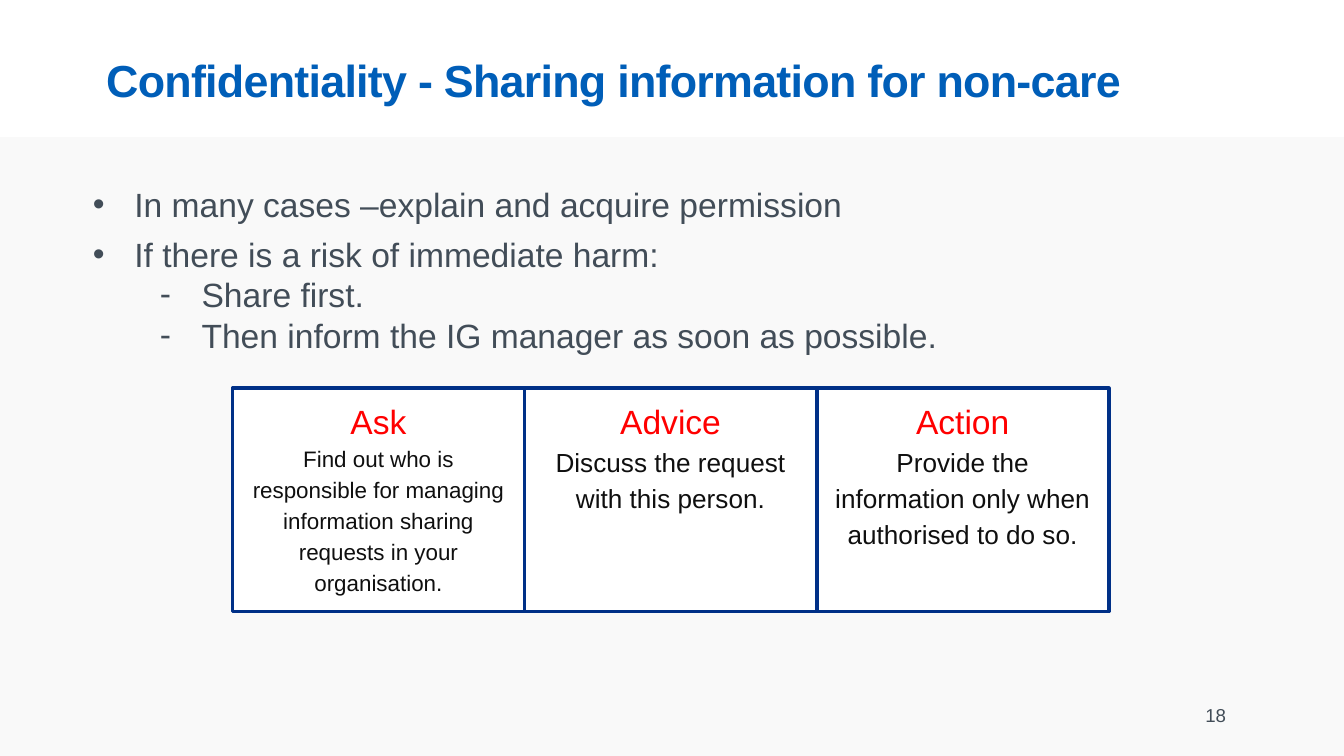
from dataclasses import dataclass

from lxml.etree import SubElement
from pptx import Presentation
from pptx.dml.color import RGBColor
from pptx.enum.shapes import MSO_SHAPE
from pptx.enum.text import MSO_ANCHOR, MSO_AUTO_SIZE, PP_ALIGN
from pptx.oxml.ns import qn
from pptx.util import Inches, Pt


@dataclass(frozen=True)
class Theme:
    font: str = "Arial"
    title: str = "005EB8"
    text: str = "424D58"
    heading: str = "FF0000"
    detail: str = "0F0F0F"
    border: str = "003087"
    band: str = "F9F9F9"
    white: str = "FFFFFF"
    title_size: int = 24
    body_size: int = 18
    number_size: int = 10


THEME = Theme()
WIDTH = 10
HEIGHT = WIDTH * 9 / 16
BAND_TOP = 1.02

# Text, level, space before
BULLETS = [
    ("In many cases –explain and acquire permission", 0, 0),
    ("If there is a risk of immediate harm:", 0, 5),
    ("Share first.", 1, 0),
    ("Then inform the IG manager as soon as possible.", 1, 0),
]
# Heading, detail, detail size
STEPS = [
    ("Ask", "Find out who is responsible for managing information sharing "
            "requests in your organisation.", 12),
    ("Advice", "Discuss the request with this person.", 14),
    ("Action", "Provide the information only when authorised to do so.", 14),
]
GRID_LEFT, GRID_RIGHT, GRID_TOP, ROW = 1.73, 8.25, 2.89, 1.66
COLUMN = (GRID_RIGHT - GRID_LEFT) / len(STEPS)


def place(sp, left, top, width, height):
    sp.left, sp.top = Inches(left), Inches(top)
    sp.width, sp.height = Inches(width), Inches(height)


def write(p, text, size, color, align=PP_ALIGN.LEFT, bold=False):
    p.text = text
    p.alignment = align
    for r in p.runs:
        r.font.name = THEME.font
        r.font.size = Pt(size)
        r.font.bold = bold
        r.font.color.rgb = RGBColor.from_string(color)


def add_box(slide, left, top, width, height, fill, border=None):
    sp = slide.shapes.add_shape(
        MSO_SHAPE.RECTANGLE, *map(Inches, (left, top, width, height)))
    sp.shadow.inherit = False
    sp.fill.solid()
    sp.fill.fore_color.rgb = RGBColor.from_string(fill)
    if border:
        sp.line.color.rgb = RGBColor.from_string(border)
        sp.line.width = Pt(2)
    else:
        sp.line.fill.background()
    return sp


def add_band(slide):
    sp = add_box(slide, 0, BAND_TOP, WIDTH, HEIGHT - BAND_TOP, THEME.band)
    # Send the band behind the placeholders
    slide.shapes.title._element.addprevious(sp._element)


def fill_title(slide, text):
    sp = slide.shapes.title
    place(sp, 0.79, 0.39, 8.35, 0.58)
    tf = sp.text_frame
    tf.margin_left = tf.margin_right = tf.margin_top = tf.margin_bottom = 0
    tf.vertical_anchor = MSO_ANCHOR.TOP
    tf.auto_size = MSO_AUTO_SIZE.NONE
    p = tf.paragraphs[0]
    write(p, text, THEME.title_size, THEME.title, bold=True)
    p.runs[0].font._element.set("spc", "-40")


def fill_bullets(slide, bullets):
    sp = slide.placeholders[1]
    place(sp, 0.59, 1.32, 8.82, 1.38)
    tf = sp.text_frame
    tf.auto_size = MSO_AUTO_SIZE.SHAPE_TO_FIT_TEXT
    for i, (text, level, before) in enumerate(bullets):
        p = tf.add_paragraph() if i else tf.paragraphs[0]
        write(p, text, THEME.body_size, THEME.text)
        p.level = level
        p.space_before = Pt(before)
        pPr = p._p.get_or_add_pPr()
        pPr.set("marL", str(Inches(0.31 + 0.5 * level)))
        pPr.set("indent", str(-Inches(0.31)))
        SubElement(pPr, qn("a:buChar")).set("char", "•-"[level])


def add_step(slide, column, heading, detail, size):
    sp = add_box(slide, GRID_LEFT + column * COLUMN, GRID_TOP, COLUMN, ROW,
                 THEME.white, THEME.border)
    tf = sp.text_frame
    tf.word_wrap = True
    tf.vertical_anchor = MSO_ANCHOR.TOP
    write(tf.paragraphs[0], heading, THEME.body_size, THEME.heading,
          PP_ALIGN.CENTER)
    write(tf.add_paragraph(), detail, size, THEME.detail, PP_ALIGN.CENTER)
    for p in tf.paragraphs:
        p.line_spacing = 1.15


def add_number(slide, number):
    sp = slide.shapes.add_textbox(*map(Inches, (6.89, 5.17, 2.33, 0.3)))
    tf = sp.text_frame
    tf.word_wrap = True
    tf.vertical_anchor = MSO_ANCHOR.MIDDLE
    write(tf.paragraphs[0], number, THEME.number_size, THEME.text,
          PP_ALIGN.RIGHT)


def main():
    prs = Presentation()
    prs.slide_width, prs.slide_height = Inches(WIDTH), Inches(HEIGHT)
    slide = prs.slides.add_slide(prs.slide_layouts[1])

    # Background, title and list
    add_band(slide)
    fill_title(slide, "Confidentiality - Sharing information for non-care")
    fill_bullets(slide, BULLETS)

    # Three steps side by side
    for column, step in enumerate(STEPS):
        add_step(slide, column, *step)

    # Slide number
    add_number(slide, "18")
    prs.save("out.pptx")


if __name__ == "__main__":
    main()
